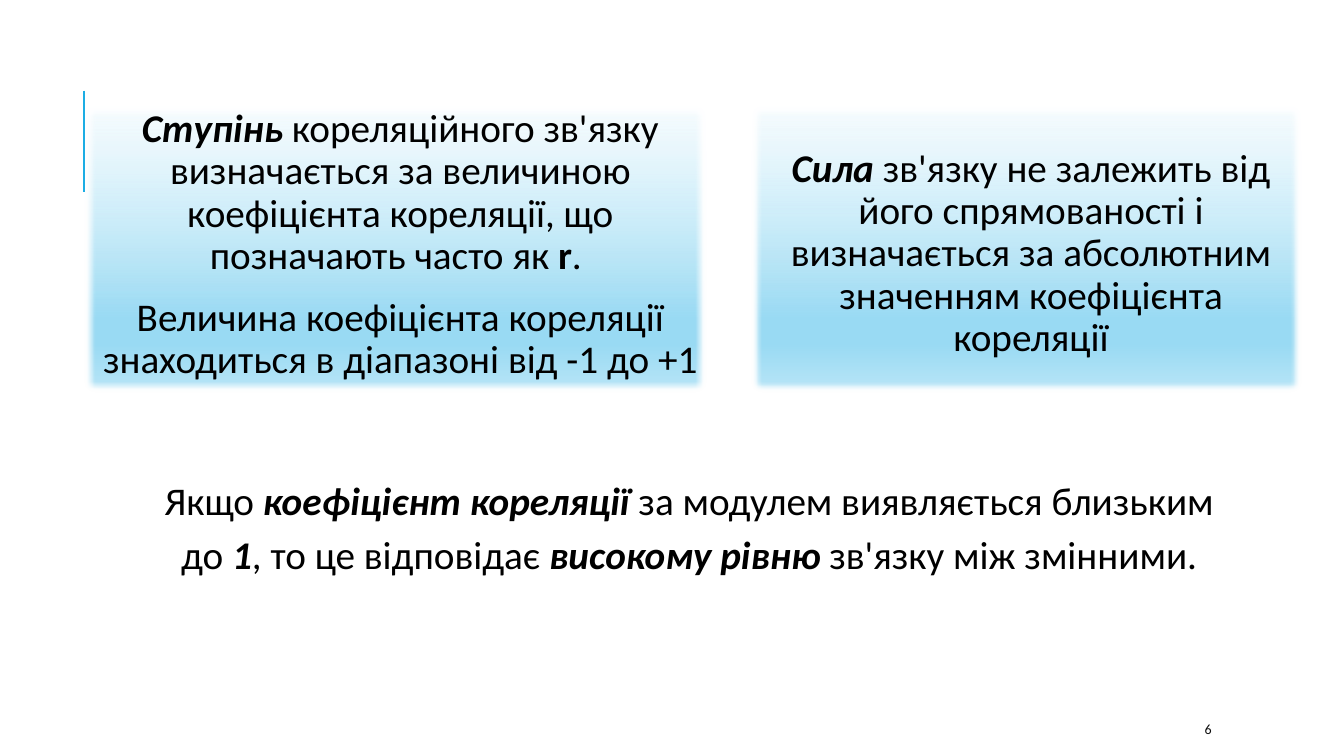
from lxml import etree
from pptx import Presentation
from pptx.dml.color import RGBColor
from pptx.enum.shapes import MSO_CONNECTOR, MSO_SHAPE
from pptx.enum.text import MSO_ANCHOR, PP_ALIGN
from pptx.oxml.ns import qn
from pptx.util import Inches, Pt

STRAIGHT = MSO_CONNECTOR.STRAIGHT
RECTANGLE = MSO_SHAPE.RECTANGLE
TOP, MIDDLE = MSO_ANCHOR.TOP, MSO_ANCHOR.MIDDLE
LEFT, CENTER = PP_ALIGN.LEFT, PP_ALIGN.CENTER

COLORS = {"accent": "1CADE4", "text": "000000", "number": "0D0D0D",
          "pale": "F4FBFE", "sky": "99DAF3", "light": "BBE6F7"}
# Gradient stops: position %, colour, opacity %
PANEL_STOPS = [(0, "pale", 66), (74, "sky", 100), (83, "sky", 100), (100, "light", 100)]

PLAIN, BOLD, STRONG = (False, False), (True, False), (True, True)


class SlideBuilder:
    font = "Calibri"
    size = 28

    def __init__(self, slide):
        self.slide = slide

    def rule(self, x, top, bottom):
        line = self.slide.shapes.add_connector(
            STRAIGHT, Inches(x), Inches(top), Inches(x), Inches(bottom))
        line.line.color.rgb = RGBColor.from_string(COLORS["accent"])
        line.line.width = Pt(1.5)
        etree.SubElement(line._element.spPr, qn("a:effectLst"))

    def fill_text(self, shape, paragraphs, align=CENTER, anchor=TOP, spacing=1.0,
                  before=0, after=0, size=None, color="text"):
        frame = shape.text_frame
        frame.word_wrap = True
        frame.vertical_anchor = anchor
        for index, pieces in enumerate(paragraphs):
            paragraph = frame.add_paragraph() if index else frame.paragraphs[0]
            paragraph.alignment = align
            paragraph.line_spacing = spacing
            paragraph.space_before = Pt(before if index else 0)
            paragraph.space_after = Pt(after)
            for text, (bold, italic) in pieces:
                run = paragraph.add_run()
                run.text = text
                run.font.name = self.font
                run.font.size = Pt(size or self.size)
                run.font.bold, run.font.italic = bold, italic
                run.font.color.rgb = RGBColor.from_string(COLORS[color])

    def panel(self, left, width, paragraphs, top_inset=0.05):
        shape = self.slide.shapes.add_shape(
            RECTANGLE, Inches(left), Inches(1.03), Inches(width), Inches(2.87))
        shape.line.fill.background()
        shape.shadow.inherit = False
        properties = shape._element.spPr

        # Vertical gradient with a translucent top
        shape.fill.gradient()
        shape.fill.gradient_angle = 270
        stops = properties.find(qn("a:gradFill")).find(qn("a:gsLst"))
        for stop in list(stops):
            stops.remove(stop)
        for position, color, opacity in PANEL_STOPS:
            stop = etree.SubElement(stops, qn("a:gs"), pos=str(position * 1000))
            tint = etree.SubElement(stop, qn("a:srgbClr"), val=COLORS[color])
            if opacity < 100:
                etree.SubElement(tint, qn("a:alpha"), val=str(opacity * 1000))

        # Soft edges
        effects = properties.find(qn("a:effectLst"))
        etree.SubElement(effects, qn("a:softEdge"), rad=str(Pt(5)))

        frame = shape.text_frame
        frame.margin_left, frame.margin_right = Inches(0.15), Inches(0.05)
        frame.margin_top, frame.margin_bottom = Inches(top_inset), Inches(0.05)
        self.fill_text(shape, paragraphs, spacing=0.9, before=12, after=2)

    def text(self, left, top, width, height, paragraphs, **style):
        box = self.slide.shapes.add_textbox(
            Inches(left), Inches(top), Inches(width), Inches(height))
        self.fill_text(box, paragraphs, **style)


def main():
    deck = Presentation()
    deck.slide_width, deck.slide_height = Inches(13.33), Inches(7.5)
    builder = SlideBuilder(deck.slides.add_slide(deck.slide_layouts[6]))

    # Accent rule
    builder.rule(0.83, 0.9, 1.9)

    # Degree and strength of the correlation
    degree = [
        [("Ступінь ", STRONG),
         ("кореляційного зв'язку визначається за величиною коефіцієнта "
          "кореляції, що позначають часто як ", PLAIN),
         ("r", BOLD), (". ", PLAIN)],
        [("Величина коефіцієнта кореляції знаходиться в діапазоні "
          "від -1 до +1", PLAIN)],
    ]
    strength = [
        [("Сила ", STRONG),
         ("зв'язку не залежить від його спрямованості і визначається за "
          "абсолютним значенням коефіцієнта кореляції", PLAIN)],
    ]
    builder.panel(0.82, 6.2, degree)
    builder.panel(7.43, 5.49, strength, top_inset=0.44)

    # Slide number
    builder.text(11.85, 7.08, 1.06, 0.3, [[("6", PLAIN)]],
                 align=LEFT, anchor=MIDDLE, size=10, color="number")

    # Conclusion
    conclusion = [
        [("Якщо ", PLAIN), ("коефіцієнт кореляції ", STRONG),
         ("за модулем виявляється близьким до ", PLAIN), ("1", STRONG),
         (", то це відповідає ", PLAIN), ("високому рівню ", STRONG),
         ("зв'язку між змінними.", PLAIN)],
    ]
    builder.text(1.45, 4.61, 10.77, 1.18, conclusion, spacing=1.15, after=6)

    deck.save("out.pptx")


if __name__ == "__main__":
    main()
